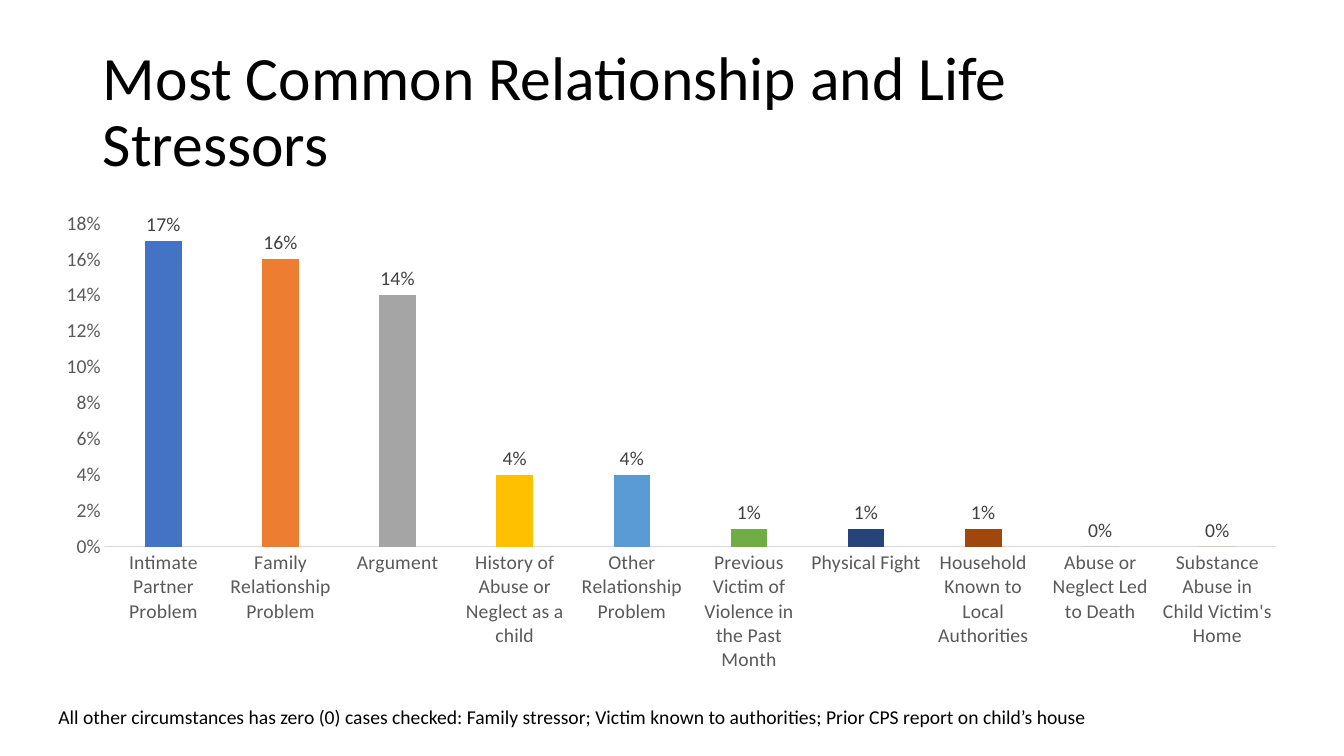
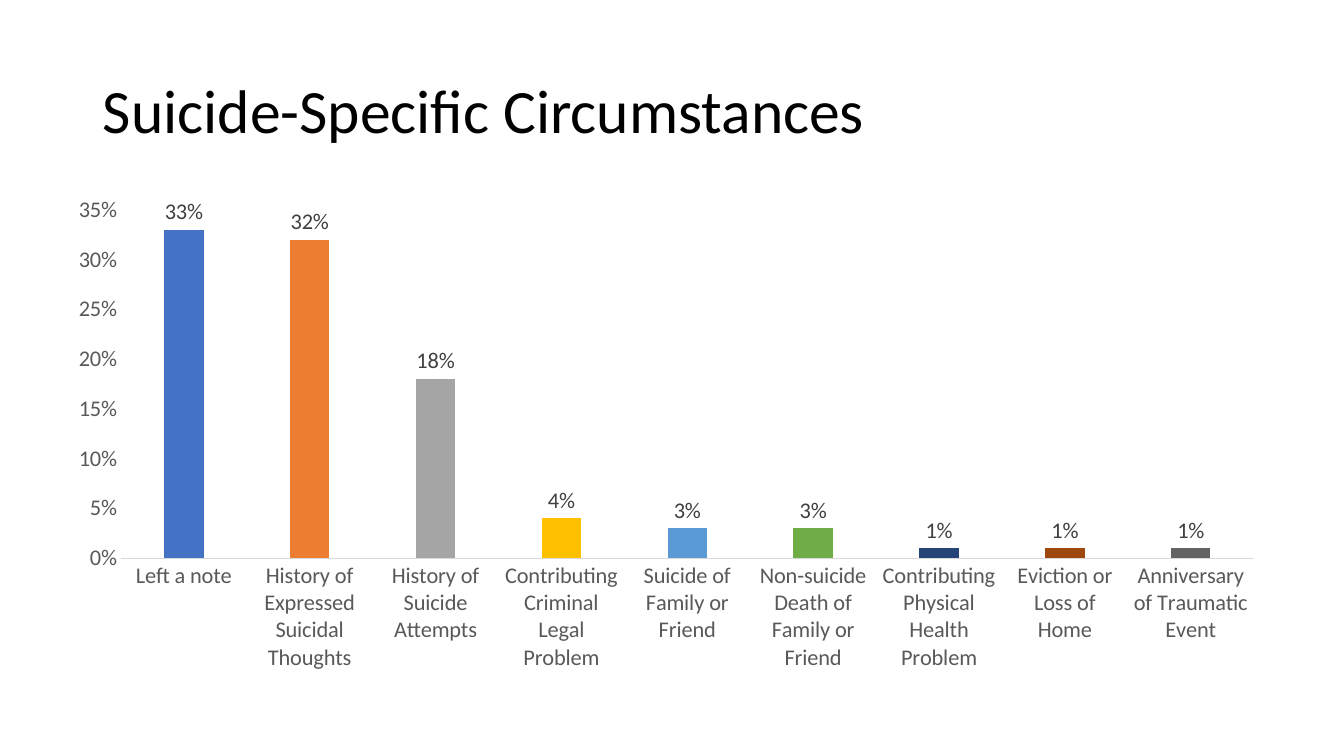
from pptx import Presentation
from pptx.chart.data import CategoryChartData
from pptx.dml.color import RGBColor
from pptx.enum.chart import XL_CHART_TYPE as ChartType
from pptx.enum.chart import XL_LABEL_POSITION as LabelPos
from pptx.enum.chart import XL_TICK_MARK as TickMark
from pptx.enum.text import MSO_ANCHOR as Anchor
from pptx.enum.text import MSO_AUTO_SIZE as AutoSize
from pptx.enum.text import PP_ALIGN as Align
from pptx.util import Cm, Pt

FONT = "Calibri"
BLACK = RGBColor(0x00, 0x00, 0x00)
AXIS_TEXT = RGBColor(0x59, 0x59, 0x59)
AXIS_LINE = RGBColor(0xD9, 0xD9, 0xD9)
LABEL_TEXT = RGBColor(0x40, 0x40, 0x40)
BLUE = RGBColor(0x44, 0x72, 0xC4)
ORANGE = RGBColor(0xED, 0x7D, 0x31)
GRAY = RGBColor(0xA5, 0xA5, 0xA5)
GOLD = RGBColor(0xFF, 0xC0, 0x00)
SKY = RGBColor(0x5B, 0x9B, 0xD5)
GREEN = RGBColor(0x70, 0xAD, 0x47)
NAVY = RGBColor(0x26, 0x44, 0x78)
RUST = RGBColor(0x9E, 0x48, 0x0E)
DARK_GRAY = RGBColor(0x63, 0x63, 0x63)
BRONZE = RGBColor(0x99, 0x73, 0x00)
BAR_COLORS = (BLUE, ORANGE, GRAY, GOLD, SKY, GREEN, NAVY, RUST, DARK_GRAY, BRONZE)

PERCENT = "0%"
TITLE_ONLY = 5

STRESSORS = {
    "Intimate Partner Problem": 0.17,
    "Family Relationship Problem": 0.16,
    "Argument": 0.14,
    "History of Abuse or Neglect as a child": 0.04,
    "Other Relationship Problem": 0.04,
    "Previous Victim of Violence in the Past Month": 0.01,
    "Physical Fight": 0.01,
    "Household Known to Local Authorities": 0.01,
    "Abuse or Neglect Led to Death": 0,
    "Substance Abuse in Child Victim's Home": 0,
}
CIRCUMSTANCES = {
    "Left a note": 0.33,
    "History of Expressed Suicidal Thoughts": 0.32,
    "History of Suicide Attempts": 0.18,
    "Contributing Criminal Legal Problem": 0.04,
    "Suicide of Family or Friend": 0.03,
    "Non-suicide Death of Family or Friend": 0.03,
    "Contributing Physical Health Problem": 0.01,
    "Eviction or Loss of Home": 0.01,
    "Anniversary of Traumatic Event": 0.01,
}


def style_font(font, size, color):
    font.name = FONT
    font.size = Pt(size)
    font.color.rgb = color


class Deck:
    def __init__(self):
        self.prs = Presentation()
        self.prs.slide_width = Cm(33.87)
        self.prs.slide_height = Cm(19.05)
        self.slide = None

    def add_slide(self, title):
        self.slide = self.prs.slides.add_slide(self.prs.slide_layouts[TITLE_ONLY])
        sp = self.slide.shapes.title
        sp.left, sp.top, sp.width, sp.height = Cm(2.34), Cm(1.02), Cm(29.21), Cm(3.68)
        tf = sp.text_frame
        tf.text = title
        tf.word_wrap = True
        tf.auto_size = AutoSize.NONE
        tf.vertical_anchor = Anchor.MIDDLE
        p = tf.paragraphs[0]
        p.alignment = Align.LEFT
        p.line_spacing = 0.9
        style_font(p.runs[0].font, 44, BLACK)

    def add_percent_chart(self, shares, box, size, top, step):
        """Draw one column per share; the value axis runs from 0 to top."""
        data = CategoryChartData(number_format=PERCENT)
        data.categories = list(shares)
        data.add_series("Series 1", list(shares.values()))
        frame = self.slide.shapes.add_chart(
            ChartType.COLUMN_CLUSTERED, *(Cm(n) for n in box), data)
        chart = frame.chart
        chart.has_title = False
        chart.has_legend = False
        style_font(chart.font, size, BLACK)

        for axis in (chart.category_axis, chart.value_axis):
            axis.has_major_gridlines = False
            axis.major_tick_mark = axis.minor_tick_mark = TickMark.NONE
            style_font(axis.tick_labels.font, size, AXIS_TEXT)
        line = chart.category_axis.format.line
        line.color.rgb = AXIS_LINE
        line.width = Pt(0.75)
        axis = chart.value_axis
        axis.format.line.fill.background()
        axis.minimum_scale, axis.maximum_scale, axis.major_unit = 0, top, step
        axis.tick_labels.number_format = PERCENT
        axis.tick_labels.number_format_is_linked = False

        plot = chart.plots[0]
        plot.gap_width = 219
        plot.overlap = -27
        plot.vary_by_categories = False
        plot.has_data_labels = True
        labels = plot.data_labels
        labels.show_value = True
        labels.position = LabelPos.OUTSIDE_END
        labels.number_format = PERCENT
        labels.number_format_is_linked = False
        style_font(labels.font, size, LABEL_TEXT)
        for i, color in enumerate(BAR_COLORS[:len(shares)]):
            fill = plot.series[0].points[i].format.fill
            fill.solid()
            fill.fore_color.rgb = color

    def add_note(self, text):
        sp = self.slide.shapes.add_textbox(Cm(1.22), Cm(17.63), Cm(31.6), Cm(0.86))
        tf = sp.text_frame
        tf.text = text
        tf.word_wrap = True
        tf.auto_size = AutoSize.SHAPE_TO_FIT_TEXT
        style_font(tf.paragraphs[0].runs[0].font, 14, BLACK)


def main():
    deck = Deck()

    deck.add_slide("Most Common Relationship and Life Stressors")
    deck.add_percent_chart(STRESSORS, (1.04, 5.08, 31.75, 12.09),
                           size=14, top=0.18, step=0.02)
    deck.add_note("All other circumstances has zero (0) cases checked: Family stressor; "
                  "Victim known to authorities; Prior CPS report on child’s house")

    deck.add_slide("Suicide-Specific Circumstances")
    deck.add_percent_chart(CIRCUMSTANCES, (1.37, 4.7, 30.84, 12.47),
                           size=16, top=0.35, step=0.05)

    deck.prs.save("out.pptx")


if __name__ == "__main__":
    main()
